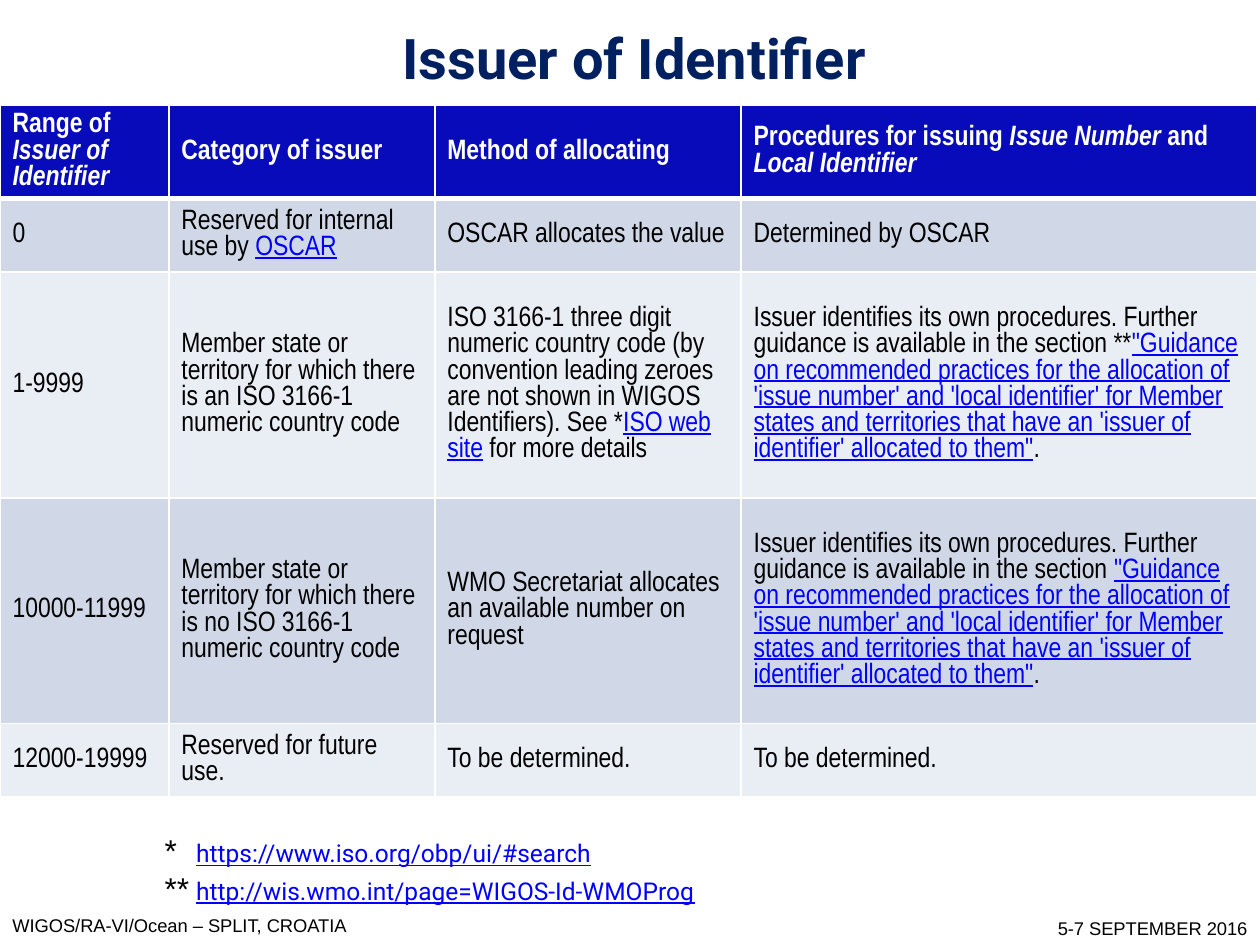
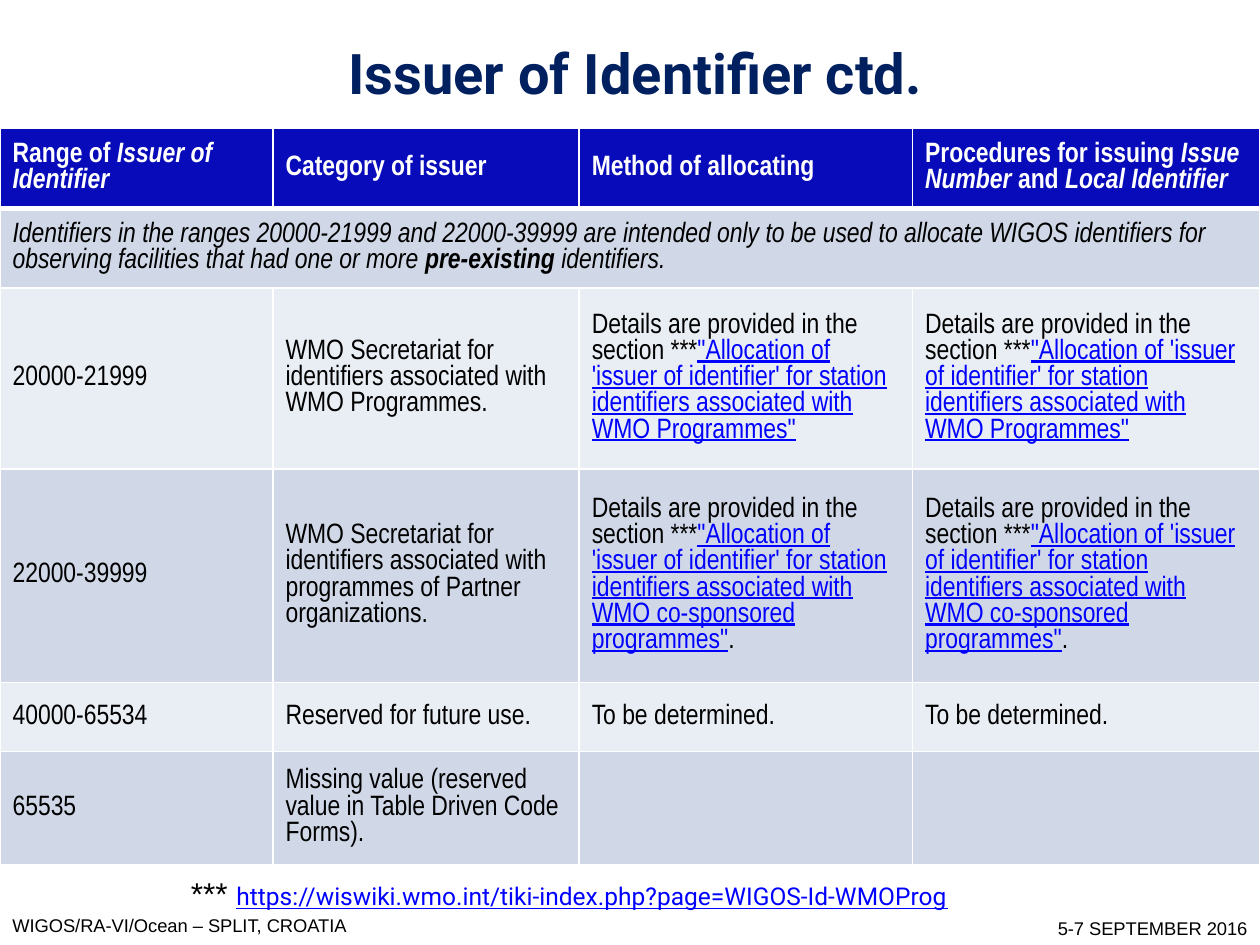
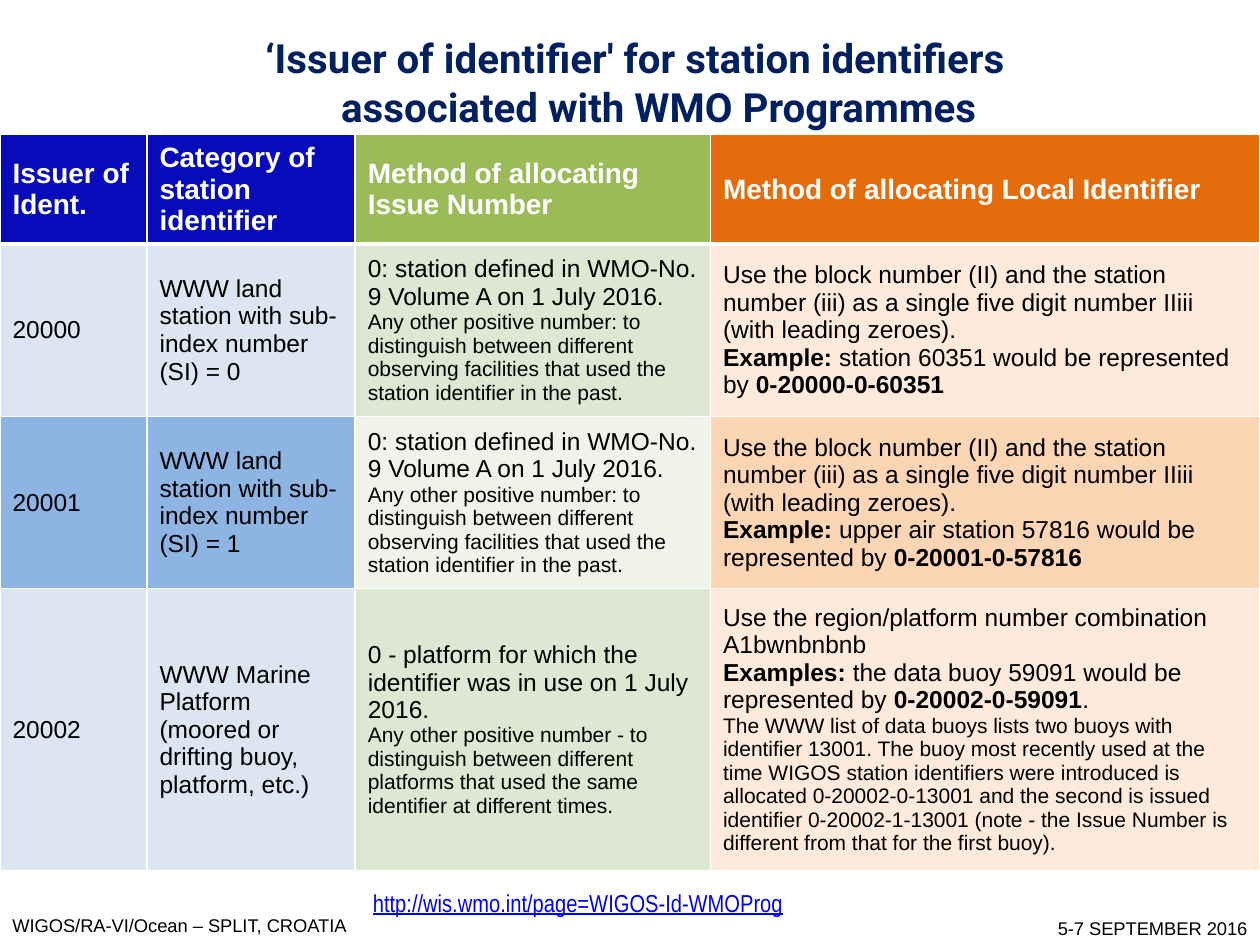
from dataclasses import dataclass

import pptx
import pptx.dml.color
import pptx.enum.text
import pptx.oxml
import pptx.oxml.ns
import pptx.util
from pptx.util import Pt

ALIGN = pptx.enum.text.PP_ALIGN
MIDDLE = pptx.enum.text.MSO_ANCHOR.MIDDLE


@dataclass(frozen=True)
class Theme:
    navy: str = "002060"
    blue: str = "070BB9"
    green: str = "9BBB59"
    orange: str = "E46C0A"
    white: str = "FFFFFF"
    black: str = "000000"
    link: str = "0000FF"
    bands: tuple = ("D0D8E8", "E9EDF4")
    blue_bands: tuple = ("DCE6F2", "8EB4E3")
    green_bands: tuple = ("DEE7D1", "EFF3EA")
    orange_bands: tuple = ("FDEADA", "FCD5B5")
    sans: str = "Arial"
    narrow: str = "Arial Narrow"
    display: str = "Roboto"
    title: float = 32
    long_title: float = 23
    marker: float = 18
    heading: float = 16
    body: float = 14
    detail: float = 12
    footer: float = 10.5
    hanging: float = 27
    grid: float = 1
    header_rule: float = 3


THEME = Theme()


@dataclass(frozen=True)
class Span:
    text: str
    bold: bool = False
    italic: bool = False
    linked: bool = False
    size: float = 0


def bold(text):
    return Span(text, bold=True)


def italic(text):
    return Span(text, italic=True)


def linked(text):
    return Span(text, linked=True)


def detail(text):
    return Span(text, size=THEME.detail)


def rgb(color):
    return pptx.dml.color.RGBColor.from_string(color)


def style_font(font, name, size, color, is_bold=False, is_italic=False):
    font.name = name
    font.size = Pt(size)
    font.color.rgb = rgb(color)
    font.bold = is_bold
    font.italic = is_italic


def hang(para, distance):
    properties = para._p.get_or_add_pPr()
    properties.set("marL", str(Pt(distance)))
    properties.set("indent", str(-Pt(distance)))


def write_spans(para, content, name, size, color, all_bold=False):
    for item in content if isinstance(content, list) else [content]:
        part = Span(item) if isinstance(item, str) else item
        for number, line in enumerate(part.text.split("\n")):
            if number:
                para.add_line_break()
            if line:
                span = para.add_run()
                span.text = line
                style_font(span.font, name, part.size or size,
                           THEME.link if part.linked else color,
                           all_bold or part.bold, part.italic)
                span.font.underline = part.linked


def add_text_box(page, left, top, width, height):
    box = page.shapes.add_textbox(Pt(left), Pt(top), Pt(width), Pt(height))
    box.text_frame.word_wrap = True
    return box


def add_footer(page, text, left, top, width, height, align):
    box = add_text_box(page, left, top, width, height)
    para = box.text_frame.paragraphs[0]
    para.text = text
    para.alignment = align
    hang(para, THEME.hanging)
    style_font(para.runs[0].font, THEME.sans, THEME.footer, THEME.black)
    page.slide_layout.shapes.element.append(box.element)


def add_title(page, text, left, width, height, size):
    title = page.shapes.title
    title.left, title.top = Pt(left), Pt(0)
    title.width, title.height = Pt(width), Pt(height)
    frame = title.text_frame
    frame.text = text
    frame.word_wrap = True
    frame.auto_size = pptx.enum.text.MSO_AUTO_SIZE.NONE
    frame.vertical_anchor = MIDDLE
    para = frame.paragraphs[0]
    para.alignment = ALIGN.CENTER
    para.space_before = Pt(0)
    hang(para, THEME.hanging)
    style_font(para.runs[0].font, THEME.display, size, THEME.navy, True)


def add_footnotes(page, notes, left, top, width, height, distance):
    frame = add_text_box(page, left, top, width, height).text_frame
    for number, (marker, address) in enumerate(notes):
        para = frame.add_paragraph() if number else frame.paragraphs[0]
        hang(para, distance)
        write_spans(para, marker + "\t", THEME.sans, THEME.marker, THEME.black)
        write_spans(para, linked(address), THEME.display, THEME.body, THEME.link)


def add_borders(cell, row):
    rule, grid = THEME.header_rule, THEME.grid
    widths = {"lnL": grid, "lnR": grid, "lnT": rule if row == 1 else grid,
              "lnB": rule if row == 0 else grid}
    for side, width in widths.items():
        cell._tc.get_or_add_tcPr().append(pptx.oxml.parse_xml(
            f'<a:{side} {pptx.oxml.ns.nsdecls("a")} w="{Pt(width)}"><a:solidFill>'
            f'<a:srgbClr val="{THEME.white}"/></a:solidFill></a:{side}>'))


def add_grid(page, left, top, widths, heights, rows, font, size,
             header_fills, band_fills):
    frame = page.shapes.add_table(len(heights), len(widths), Pt(left), Pt(top),
                                  Pt(sum(widths)), Pt(sum(heights)))
    table = frame.table
    table.horz_banding = False
    for column, width in zip(table.columns, widths):
        column.width = Pt(width)
    for row, height in zip(table.rows, heights):
        row.height = Pt(height)
    for row, contents in enumerate(rows):
        if len(contents) == 1:
            table.cell(row, 0).merge(table.cell(row, len(widths) - 1))
        for column in range(len(widths)):
            cell = table.cell(row, column)
            add_borders(cell, row)
            bands = band_fills[column]
            fill = bands[(row - 1) % len(bands)] if row else header_fills[column]
            cell.fill.solid()
            cell.fill.fore_color.rgb = rgb(fill)
            cell.vertical_anchor = MIDDLE
            if column < len(contents):
                write_spans(cell.text_frame.paragraphs[0], contents[column], font,
                            size if row else THEME.heading,
                            THEME.black if row else THEME.white, row == 0)


def add_issuer_grid(page, top, widths, heights, rows):
    header = [["Range of ", italic("Issuer of Identifier")],
              "Category of issuer", "Method of allocating",
              ["Procedures for issuing ", italic("Issue Number"), " and ",
               italic("Local Identifier")]]
    add_grid(page, 0, top, widths, heights, [header] + rows, THEME.narrow,
             THEME.heading, [THEME.blue] * 4, [THEME.bands] * 4)


def own_procedures(marker):
    return ["Issuer identifies its own procedures. Further guidance is available "
            "in the section " + marker,
            linked("\"Guidance on recommended practices for the allocation of "
                   "'issue number' and 'local identifier' for Member states and "
                   "territories that have an 'issuer of identifier' allocated "
                   "to them\""), "."]


def member_state(condition):
    return (f"Member state or territory for which there is {condition} "
            "ISO 3166-1 numeric country code")


def allocation_details(programmes, ending):
    return ["Details are provided in the section ***",
            linked("\"Allocation of 'issuer of identifier' for station identifiers "
                   f"associated with {programmes}\""), ending]


def land_station_row(issuer, sub_index, subject, number):
    return [
        issuer,
        f"WWW land station with sub-index number (SI) = {sub_index}",
        ["0: station defined in WMO-No. 9 Volume A on 1 July 2016.\n",
         detail("Any other positive number: to distinguish between different "
                "observing facilities that used the station identifier in the past.")],
        ["Use the block number (II) and the station number (iii) as a single five "
         "digit number IIiii (with leading zeroes).\n",
         bold("Example: "), f"{subject} {number} would be represented by ",
         bold(f"0-{issuer}-0-{number}")]]


def build_issuers(page):
    undecided = "To be determined."
    add_issuer_grid(page, 60, [96.5, 152, 175, 294.5], [53.5, 42, 129, 129, 42], [
        ["0", ["Reserved for internal use by ", linked("OSCAR")],
         "OSCAR allocates the value", "Determined by OSCAR"],
        ["1-9999", member_state("an"),
         ["ISO 3166-1 three digit numeric country code (by convention leading "
          "zeroes are not shown in WIGOS Identifiers). See *",
          linked("ISO web site"), " for more details"],
         own_procedures("**")],
        ["10000-11999", member_state("no"),
         "WMO Secretariat allocates an available number on request",
         own_procedures("")],
        ["12000-19999", "Reserved for future use.", undecided, undecided]])
    add_title(page, "Issuer of Identifier", 112, 501, 65.5, THEME.title)
    add_footnotes(page, [("*", "https://www.iso.org/obp/ui/#search"),
                         ("**", "http://wis.wmo.int/page=WIGOS-Id-WMOProg")],
                  87, 471.5, 570, 51, 18)


def build_more_issuers(page):
    undecided = "To be determined."
    programmes = allocation_details("WMO Programmes", "")
    sponsored = allocation_details("WMO co-sponsored programmes", ".")
    secretariat = "WMO Secretariat for identifiers associated with "
    add_issuer_grid(
        page, 73.5, [156, 175, 190.5, 198.5], [45.5, 45.5, 103.5, 122, 39.5, 64.5], [
            [[italic("Identifiers in the ranges 20000-21999 and 22000-39999 are "
                     "intended only to be used to allocate WIGOS identifiers for "
                     "observing facilities that had one or more "),
              Span("pre-existing", bold=True, italic=True),
              italic(" identifiers.")]],
            ["20000-21999", secretariat + "WMO Programmes.", programmes, programmes],
            ["22000-39999", secretariat + "programmes of Partner organizations.",
             sponsored, sponsored],
            ["40000-65534", "Reserved for future use.", undecided, undecided],
            ["65535", "Missing value (reserved value in Table Driven Code Forms).",
             "", ""]])
    add_title(page, "Issuer of Identifier ctd.", 113, 500.5, 83, THEME.title)
    add_footnotes(page, [("***", "https://wiswiki.wmo.int/tiki-index.php"
                                 "?page=WIGOS-Id-WMOProg")],
                  102, 496, 586, 29, 26)


def build_stations(page):
    add_title(page, "‘Issuer of identifier' for station identifiers associated "
                    "with WMO Programmes", 111, 504.5, 93.5, THEME.long_title)
    rows = [
        ["Issuer of Ident.", "Category of station identifier",
         "Method of allocating Issue Number",
         "Method of allocating Local Identifier"],
        land_station_row("20000", 0, "station", "60351"),
        land_station_row("20001", 1, "upper air station", "57816"),
        ["20002", "WWW Marine Platform (moored or drifting buoy, platform, etc.)",
         ["0 - platform for which the identifier was in use on 1 July 2016.\n",
          detail("Any other positive number - to distinguish between different "
                 "platforms that used the same identifier at different times.")],
         ["Use the region/platform number combination A1bwnbnbnb\n",
          bold("Examples: "), "the data buoy 59091 would be represented by ",
          bold("0-20002-0-59091"), ".\n",
          detail("The WWW list of data buoys lists two buoys with identifier 13001. "
                 "The buoy most recently used at the time WIGOS station identifiers "
                 "were introduced is allocated 0-20002-0-13001 and the second is "
                 "issued identifier 0-20002-1-13001 (note - the Issue Number is "
                 "different from that for the first buoy).")]]]
    add_grid(page, 0, 77, [84, 119, 203, 314], [62.5, 98.5, 98.5, 161], rows,
             THEME.sans, THEME.body,
             [THEME.blue, THEME.blue, THEME.green, THEME.orange],
             [THEME.blue_bands, THEME.blue_bands, THEME.green_bands,
              THEME.orange_bands])
    box = add_text_box(page, 206, 504, 367, 24.5)
    write_spans(box.text_frame.paragraphs[0],
                linked("http://wis.wmo.int/page=WIGOS-Id-WMOProg"),
                THEME.narrow, THEME.body, THEME.link)


def main():
    deck = pptx.Presentation()
    deck.slide_width, deck.slide_height = Pt(720), Pt(540)
    title_only = deck.slide_layouts.get_by_name("Title Only")
    builders = [build_issuers, build_more_issuers, build_stations]
    pages = [deck.slides.add_slide(title_only) for _ in builders]
    add_footer(pages[0], "WIGOS/RA-VI/Ocean – SPLIT, CROATIA",
               0, 519, 255.5, 21, ALIGN.LEFT)
    add_footer(pages[0], "5-7 SEPTEMBER 2016", 557.5, 520.5, 162.5, 19.5, ALIGN.RIGHT)
    for build, page in zip(builders, pages):
        build(page)
    deck.save("out.pptx")


if __name__ == "__main__":
    main()
